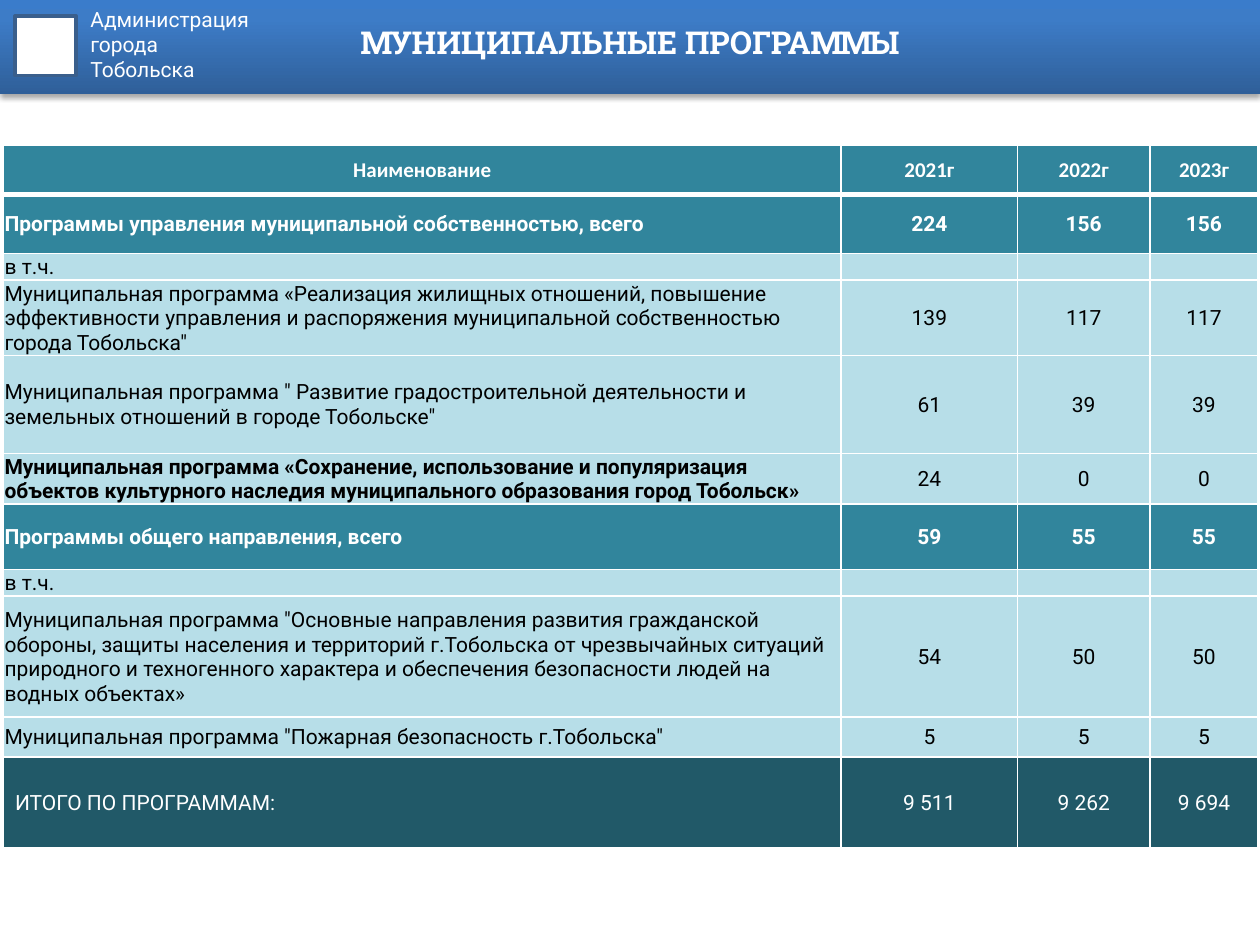
from dataclasses import dataclass

from lxml.etree import SubElement
from pptx import Presentation
from pptx.dml.color import RGBColor
from pptx.enum.shapes import MSO_SHAPE as Shape
from pptx.enum.text import MSO_ANCHOR as Anchor, PP_ALIGN as Align
from pptx.oxml import parse_xml
from pptx.oxml.ns import nsdecls, qn
from pptx.util import Pt


@dataclass(frozen=True)
class Theme:
    white: str = "FFFFFF"
    black: str = "000000"
    teal: str = "31859C"
    pale: str = "B7DEE8"
    dark: str = "215968"
    frame: str = "3A5F8C"
    banner: tuple = ((0, "2F5F99"), (80, "3D7CC7"), (100, "3A7CCB"))
    title_size: float = 18
    text_size: float = 12
    body: str = "Roboto"
    heading: str = "Roboto Slab"
    table_head: str = "Calibri"


THEME = Theme()
PAGE_SIZE = (720, 540)
COLUMNS = (478.8, 100.8, 75.6, 61.9)
STYLES = {
    "head": dict(fill=THEME.teal, color=THEME.white, bold=True, name=THEME.table_head),
    "group": dict(fill=THEME.teal, color=THEME.white, bold=True),
    "item": dict(fill=THEME.pale, color=THEME.black),
    "strong": dict(fill=THEME.pale, color=THEME.black, bold_label=True),
    "total": dict(fill=THEME.dark, color=THEME.white, indent=6),
}
ROWS = (
    ("head", 28, "Наименование", "2021г", "2022г", "2023г"),
    ("group", 33.8, "Программы управления муниципальной собственностью, всего",
     "224", "156", "156"),
    ("item", 15, "в т.ч.", "", "", ""),
    ("item", 43, "Муниципальная программа «Реализация жилищных отношений, повышение "
     "эффективности управления и распоряжения муниципальной собственностью "
     "города Тобольска\"", "139", "117", "117"),
    ("item", 56, "Муниципальная программа \" Развитие градостроительной деятельности и "
     "земельных отношений в городе Тобольске\"", "61", "39", "39"),
    ("strong", 28.8, "Муниципальная программа «Сохранение, использование и популяризация "
     "объектов культурного наследия муниципального образования город Тобольск»",
     "24", "0", "0"),
    ("group", 37.4, "Программы общего направления, всего", "59", "55", "55"),
    ("item", 15, "в т.ч.", "", "", ""),
    ("item", 69, "Муниципальная программа \"Основные направления развития гражданской "
     "обороны, защиты населения и территорий г.Тобольска от чрезвычайных ситуаций "
     "природного и техногенного характера и обеспечения безопасности людей на "
     "водных объектах»", "54", "50", "50"),
    ("item", 23, "Муниципальная программа \"Пожарная безопасность г.Тобольска\"",
     "5", "5", "5"),
    ("total", 51.8, "ИТОГО ПО ПРОГРАММАМ:", "9 511", "9 262", "9 694"),
)


def apply(target, values):
    for name, value in values.items():
        setattr(target, name, value)


def add_span(para, text, color, size=THEME.text_size, name=THEME.body, bold=False):
    span = para.add_run()
    span.text = text
    apply(span.font, dict(size=Pt(size), name=name, bold=bold))
    span.font.color.rgb = RGBColor.from_string(color)


def add_box(page, left, top, width, height):
    box = page.shapes.add_shape(
        Shape.RECTANGLE, Pt(left), Pt(top), Pt(width), Pt(height))
    box.shadow.inherit = False
    return box


def add_banner(page):
    banner = add_box(page, 0, 0, PAGE_SIZE[0], 54)
    banner.line.fill.background()
    stops = "".join(
        f'<a:gs pos="{place * 1000}"><a:srgbClr val="{color}"/></a:gs>'
        for place, color in THEME.banner)
    gradient = parse_xml(
        f'<a:gradFill {nsdecls("a")} rotWithShape="1"><a:gsLst>{stops}</a:gsLst>'
        '<a:lin ang="16200000" scaled="0"/></a:gradFill>')
    properties = banner.element.spPr
    properties.find(qn("a:prstGeom")).addnext(gradient)
    shadow = SubElement(
        properties.find(qn("a:effectLst")), qn("a:outerShdw"),
        blurRad=str(Pt(3.1)), dist=str(Pt(1.8)), dir="5400000", rotWithShape="0")
    tint = SubElement(shadow, qn("a:srgbClr"), val=THEME.black)
    SubElement(tint, qn("a:alpha"), val="35000")


def add_emblem(page):
    emblem = add_box(page, 8.6, 9.2, 35, 34)
    emblem.fill.solid()
    emblem.fill.fore_color.rgb = RGBColor.from_string(THEME.white)
    emblem.line.color.rgb = RGBColor.from_string(THEME.frame)
    emblem.line.width = Pt(2)


def add_owner(page, lines):
    box = page.shapes.add_textbox(Pt(44.6), Pt(0), Pt(168.5), Pt(65.5))
    frame = box.text_frame
    frame.word_wrap = True
    for index, line in enumerate(lines):
        para = frame.add_paragraph() if index else frame.paragraphs[0]
        add_span(para, line, THEME.white)


def place_title(page, text):
    title = page.shapes.title
    apply(title, dict(left=Pt(146.2), top=Pt(0), width=Pt(427.7), height=Pt(51)))
    frame = title.text_frame
    apply(frame, dict(word_wrap=True, vertical_anchor=Anchor.MIDDLE,
                      margin_bottom=Pt(6.6)))
    para = frame.paragraphs[0]
    para.alignment = Align.CENTER
    add_span(para, text, THEME.white, THEME.title_size, THEME.heading, True)
    page.shapes.element.append(title.element)


def set_borders(cell, widths):
    properties = cell._tc.get_or_add_tcPr()
    for index, (side, width) in enumerate(zip("LRTB", widths)):
        properties.insert(index, parse_xml(
            f'<a:ln{side} {nsdecls("a")} w="{Pt(width)}"><a:solidFill>'
            f'<a:srgbClr val="{THEME.white}"/></a:solidFill></a:ln{side}>'))


def fill_cell(cell, text, style, is_label, is_head, below_head):
    cell.fill.solid()
    cell.fill.fore_color.rgb = RGBColor.from_string(style["fill"])
    indent = style.get("indent", 0) if is_label else 0
    apply(cell, dict(vertical_anchor=Anchor.MIDDLE, margin_left=Pt(0.72 + indent),
                     margin_right=Pt(0.72), margin_top=Pt(0.72), margin_bottom=Pt(0)))
    set_borders(cell, (1, 1, 3 if below_head else 1, 3 if is_head else 1))
    para = cell.text_frame.paragraphs[0]
    para.alignment = Align.LEFT if is_label and not is_head else Align.CENTER
    if text:
        bold = style.get("bold", False) or (is_label and style.get("bold_label", False))
        add_span(para, text, style["color"], name=style.get("name", THEME.body), bold=bold)
    else:
        SubElement(para._p, qn("a:endParaRPr"), sz=str(THEME.text_size * 100))


def add_programmes(page):
    heights = [row[1] for row in ROWS]
    table = page.shapes.add_table(
        len(ROWS), len(COLUMNS), Pt(1.9), Pt(83),
        Pt(sum(COLUMNS)), Pt(sum(heights))).table
    apply(table, dict(first_row=False, horz_banding=False))
    for column, width in zip(table.columns, COLUMNS):
        column.width = Pt(width)
    for index, (kind, height, *texts) in enumerate(ROWS):
        table.rows[index].height = Pt(height)
        for place, text in enumerate(texts):
            fill_cell(table.cell(index, place), text, STYLES[kind],
                      place == 0, index == 0, index == 1)


def main():
    deck = Presentation()
    deck.slide_width, deck.slide_height = map(Pt, PAGE_SIZE)
    page = deck.slides.add_slide(deck.slide_layouts[5])
    add_banner(page)
    add_emblem(page)
    add_owner(page, ("Администрация", "города", "Тобольска"))
    place_title(page, "МУНИЦИПАЛЬНЫЕ ПРОГРАММЫ")
    add_programmes(page)
    deck.save("out.pptx")


if __name__ == "__main__":
    main()
